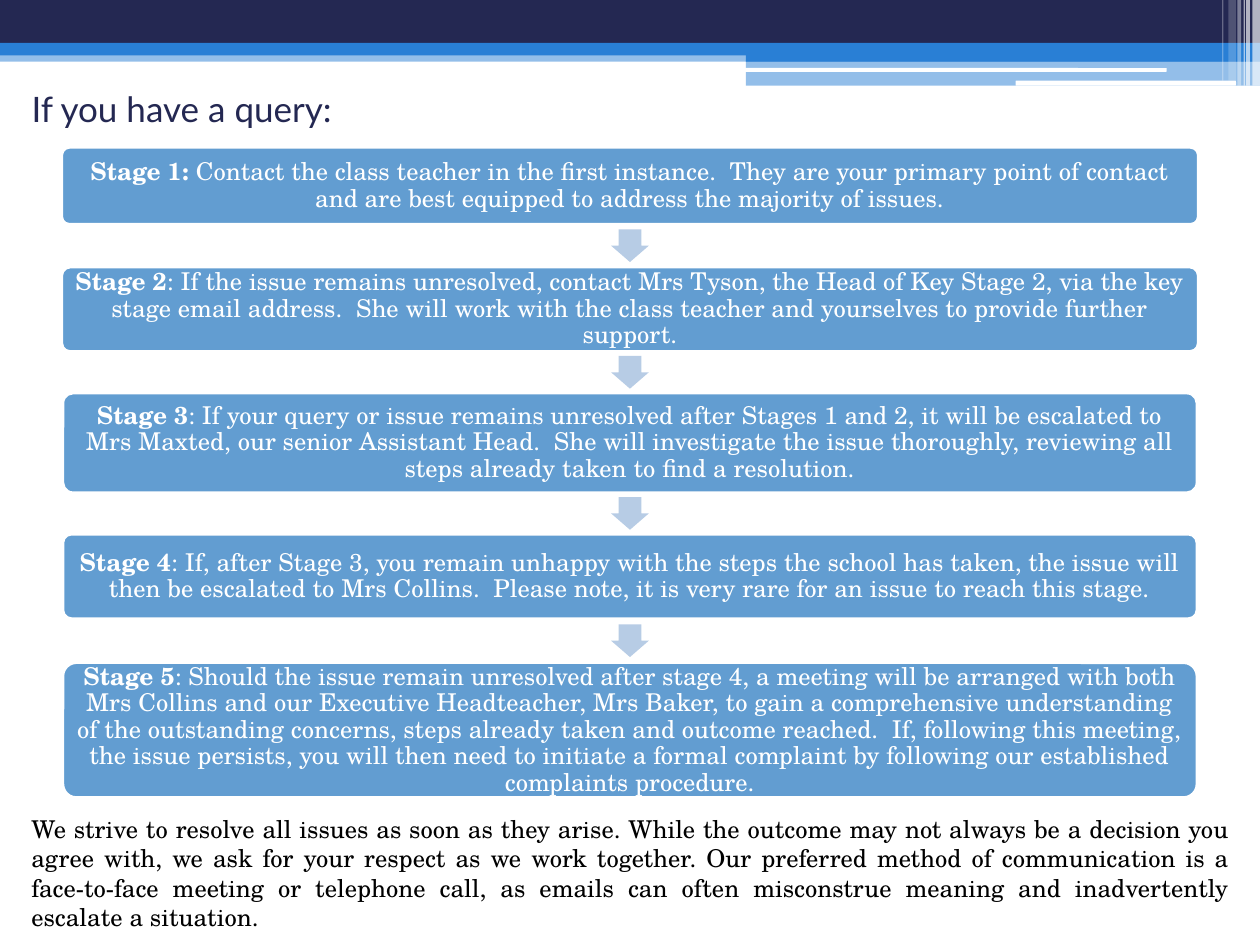
from lxml.etree import SubElement
from pptx import Presentation
from pptx.dml.color import RGBColor
from pptx.enum.shapes import MSO_SHAPE
from pptx.enum.text import MSO_ANCHOR, PP_ALIGN
from pptx.oxml.ns import qn
from pptx.util import Inches, Pt

COLORS = {
    "navy": "242852",
    "blue": "297FD5",
    "stage": "629DD1",
    "arrow": "B7CCE5",
    "white": "FFFFFF",
    "black": "000000",
}
BODY_FONT = "TeX Gyre Schola"

BANNER_BARS = [
    (0, 0.4, 10, 0.09, "blue", 50),
    (0, 0, 10, 0.34, "navy", 100),
    (0, 0.34, 10, 0.1, "blue", 100),
    (5.92, 0.39, 4.08, 0.1, "blue", 100),
    (5.92, 0.48, 4.08, 0.2, "blue", 50),
]
BANNER_LINES = [(5.91, 0.54, 3.35, 0.03), (8.06, 0.64, 1.75, 0.04)]
BANNER_STRIPES = [
    (9.94, 0.06, 0.68, 65),
    (9.89, 0.03, 0.68, 65),
    (9.87, 0.01, 0.68, 60),
    (9.82, 0.03, 0.68, 40),
    (9.75, 0.06, 0.64, 20),
    (9.7, 0.01, 0.64, 30),
]

STAGES = [
    (0.49, 1.17, 9.02, 0.61, "Stage 1: ",
     "Contact the class teacher in the first instance.  They are your primary point of "
     "contact and are best equipped to address the majority of issues."),
    (0.49, 2.12, 9.02, 0.67, "Stage 2",
     ": If the issue remains unresolved, contact Mrs Tyson, the Head of Key Stage 2, via "
     "the key stage email address.  She will work with the class teacher and yourselves "
     "to provide further support."),
    (0.5, 3.12, 9, 0.79, "Stage 3",
     ": If your query or issue remains unresolved after Stages 1 and 2, it will be "
     "escalated to Mrs Maxted, our senior Assistant Head.  She will investigate the issue "
     "thoroughly, reviewing all steps already taken to find a resolution."),
    (0.5, 4.24, 9, 0.67, "Stage 4",
     ": If, after Stage 3, you remain unhappy with the steps the school has taken, the "
     "issue will then be escalated to Mrs Collins.  Please note, it is very rare for an "
     "issue to reach this stage."),
    (0.5, 5.26, 9, 1.07, "Stage 5",
     ": Should the issue remain unresolved after stage 4, a meeting will be arranged with "
     "both Mrs Collins and our Executive Headteacher, Mrs Baker, to gain a comprehensive "
     "understanding of the outstanding concerns, steps already taken and outcome reached.  "
     "If, following this meeting, the issue persists, you will then need to initiate a "
     "formal complaint by following our established complaints procedure."),
]
CLOSING = (
    "We strive to resolve all issues as soon as they arise. While the outcome may not "
    "always be a decision you agree with, we ask for your respect as we work together. "
    "Our preferred method of communication is a face-to-face meeting or telephone call, "
    "as emails can often misconstrue meaning and inadvertently escalate a situation. "
)


def color(name):
    return RGBColor.from_string(COLORS[name])


def set_font(font, name, size, tone):
    font.name = name
    font.size = Pt(size)
    font.color.rgb = color(tone)


def add_block(page, kind, box, tone, opacity=100):
    block = page.shapes.add_shape(kind, *map(Inches, box))
    block.shadow.inherit = False
    block.fill.solid()
    block.fill.fore_color.rgb = color(tone)
    block.line.fill.background()
    if opacity < 100:
        fill_color = block.fill._xPr.find(qn("a:solidFill"))[0]
        SubElement(fill_color, qn("a:alpha"), val=str(opacity * 1000))
    return block


def add_banner(page):
    for *box, tone, opacity in BANNER_BARS:
        add_block(page, MSO_SHAPE.RECTANGLE, box, tone, opacity)
    for box in BANNER_LINES:
        add_block(page, MSO_SHAPE.ROUNDED_RECTANGLE, box, "white")
    for left, width, height, opacity in BANNER_STRIPES:
        add_block(page, MSO_SHAPE.RECTANGLE, (left, 0, width, height), "white", opacity)


def add_title(page, box):
    title = page.shapes.title
    title.left, title.top, title.width, title.height = map(Inches, box)
    frame = title.text_frame
    frame.text = "If you have a query:"
    frame.vertical_anchor = MSO_ANCHOR.MIDDLE
    para = frame.paragraphs[0]
    para.alignment = PP_ALIGN.LEFT
    set_font(para.font, "Lato", 20, "navy")


def add_stage(page, box, label, text):
    stage = add_block(page, MSO_SHAPE.ROUNDED_RECTANGLE, box, "stage")
    stage.adjustments[0] = 0.1
    stage.line.color.rgb = color("white")
    stage.line.width = Pt(1.5)
    frame = stage.text_frame
    frame.word_wrap = True
    frame.vertical_anchor = MSO_ANCHOR.MIDDLE
    frame.margin_left = frame.margin_right = Inches(0.06)
    frame.margin_top = frame.margin_bottom = Inches(0.06)
    para = frame.paragraphs[0]
    para.alignment = PP_ALIGN.CENTER
    para.line_spacing = 0.9
    set_font(para.font, BODY_FONT, 14, "white")
    for words, bold in ((label, True), (text, False)):
        span = para.add_run()
        span.text = words
        span.font.bold = bold


def add_arrow(page, center_x, center_y, width=0.3, height=0.26):
    box = (center_x - width / 2, center_y - height / 2, width, height)
    arrow = add_block(page, MSO_SHAPE.DOWN_ARROW, box, "arrow")
    arrow.adjustments[0] = 0.6
    arrow.adjustments[1] = 0.5


def add_stages(page):
    previous_bottom = None
    for left, top, width, height, label, text in STAGES:
        if previous_bottom is not None:
            add_arrow(page, left + width / 2, (previous_bottom + top) / 2)
        add_stage(page, (left, top, width, height), label, text)
        previous_bottom = top + height


def add_closing(page, box):
    frame = page.shapes.add_textbox(*map(Inches, box)).text_frame
    frame.word_wrap = True
    frame.text = CLOSING
    para = frame.paragraphs[0]
    para.alignment = PP_ALIGN.JUSTIFY
    set_font(para.font, BODY_FONT, 14, "black")


def main():
    deck = Presentation()
    deck.slide_width, deck.slide_height = Inches(10), Inches(7.5)
    page = deck.slides.add_slide(deck.slide_layouts[5])
    add_banner(page)
    add_title(page, (0.15, 0.28, 2.77, 1.17))
    add_stages(page)
    add_closing(page, (0.15, 6.41, 9.71, 0.81))
    deck.save("out.pptx")


if __name__ == "__main__":
    main()
